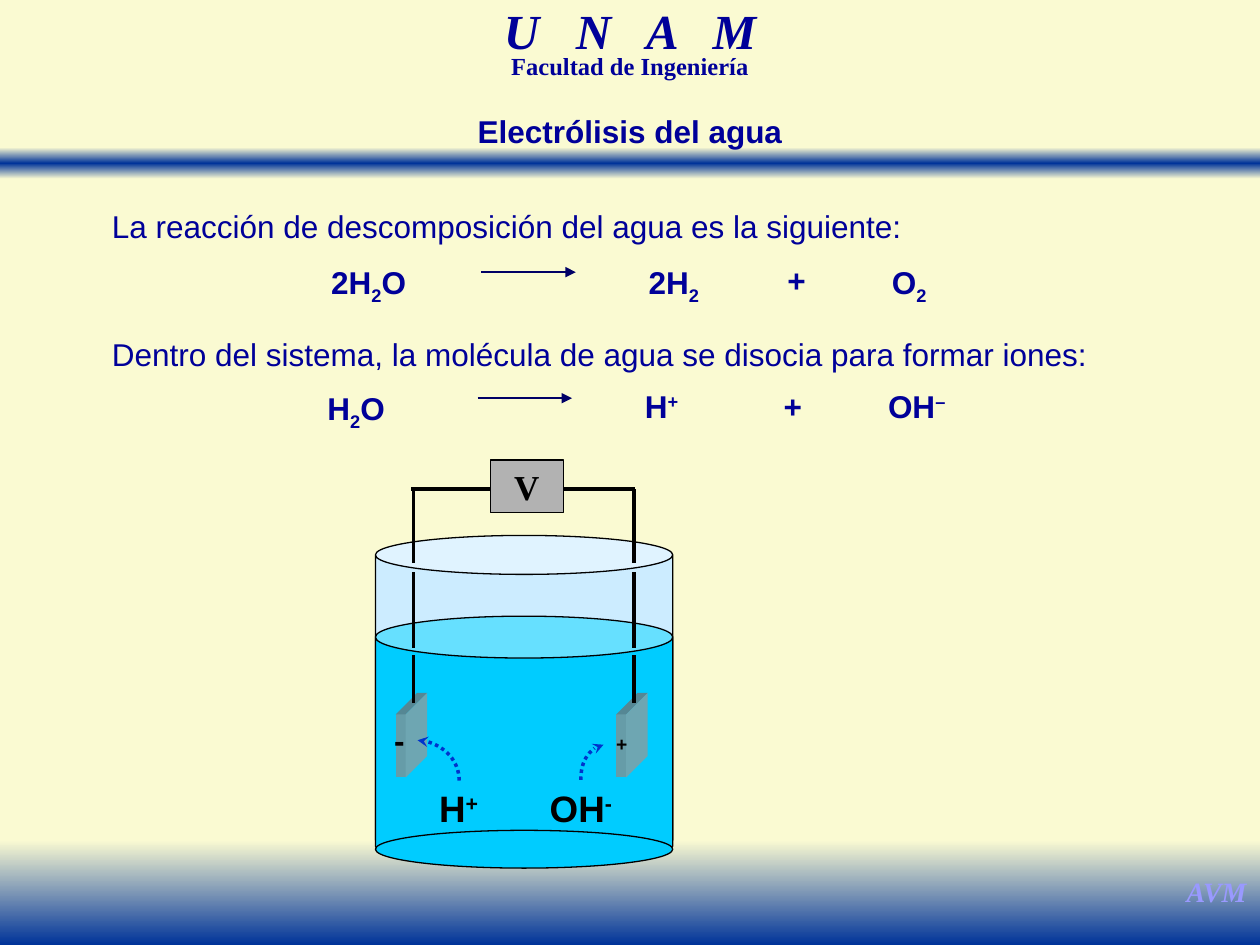
from copy import deepcopy

from lxml import etree
from pptx import Presentation
from pptx import util as u
from pptx.dml.color import RGBColor
from pptx.enum import dml, shapes, text
from pptx.oxml.ns import qn

Inches = u.Inches
COLORS = {
    "cream": "FAFAD2", "band": "003399", "navy": "000099", "arrow": "000066",
    "lilac": "9999FF", "black": "000000", "glass": "CCECFF", "water": "00CCFF",
    "gray": "B2B2B2", "ion": "0033CC", "front": "669CA8", "top": "558794",
    "side": "6EA6B2",
}
rgb = {name: RGBColor.from_string(value) for name, value in COLORS.items()}
KIND = shapes.MSO_SHAPE
ALIGN = text.PP_ALIGN

prs = Presentation()
prs.slide_width, prs.slide_height = Inches(10), Inches(7.5)
slide = prs.slides.add_slide(prs.slide_layouts[6])
slide.background.fill.solid()
slide.background.fill.fore_color.rgb = rgb["cream"]
canvas = slide.shapes


def write(box, words, size, color="navy", font="Arial", bold=True, italic=False,
          align=ALIGN.CENTER, spacing=None, wrap=False):
    """Fill a box with one paragraph; words alternate as (text, baseline %)."""
    frame = box.text_frame
    frame.word_wrap = wrap
    para = frame.paragraphs[0]
    para.alignment = align
    if spacing:
        para.line_spacing = spacing
    para.font.size, para.font.name = u.Pt(size), font
    para.font.bold, para.font.italic = bold, italic
    para.font.color.rgb = rgb[color]
    for part, baseline in words:
        run = para.add_run()
        run.text = part
        if baseline:
            run._r.get_or_add_rPr().set("baseline", str(baseline * 1000))


def wire(x1, y1, x2, y2, color="black", width=2, head=None):
    """Draw a straight line without shadow, with an arrowhead if asked."""
    line = canvas.add_connector(shapes.MSO_CONNECTOR.STRAIGHT,
                                *map(Inches, (x1, y1, x2, y2)))
    line.line.color.rgb = rgb[color]
    line.line.width = u.Pt(width)
    if head:
        etree.SubElement(line.line._get_or_add_ln(), qn("a:tailEnd"), type=head)
    etree.SubElement(line._element.spPr, qn("a:effectLst"))
    return line


# Gradient bands under the title and at the foot
for top, height, names in [(1.17, 0.25, ["cream", "band", "cream"]),
                           (6.67, 0.83, ["cream", "band"])]:
    band = canvas.add_shape(KIND.RECTANGLE, 0, Inches(top), Inches(10), Inches(height))
    band.shadow.inherit = False
    band.line.fill.background()
    band.fill.gradient()
    band.fill.gradient_angle = 270
    stops = band._element.spPr.find(".//" + qn("a:gsLst"))
    if len(names) == 3:
        stops.append(deepcopy(stops[-1]))
    for i, (stop, name) in enumerate(zip(band.fill.gradient_stops, names)):
        stop.color.rgb = rgb[name]
        stop.position = i / (len(names) - 1)

# Heading, signature and title
for at, words, size, style in [
    ((3.04, 0.08, 3.92, 0.43), "U\u00a0\u00a0 N\u00a0\u00a0 A\u00a0\u00a0 M".replace("\u00a0", " "), 28,
     dict(font="Times New Roman", italic=True, spacing=0.7, wrap=True)),
    ((3.21, 0.42, 3.58, 0.26), "Facultad de Ingeniería", 14,
     dict(font="Times New Roman", spacing=0.7, wrap=True)),
    ((9.31, 6.89, 0.69, 0.37), "AVM", 16,
     dict(font="Times New Roman", italic=True, color="lilac")),
    ((3.68, 0.84, 2.64, 0.4), "Electrólisis del agua", 18, {}),
]:
    write(canvas.add_textbox(*map(Inches, at)), [(words, 0)], size, **style)

# Explanations, each followed by its reaction
for sentence, sentence_top, left, top, terms in [
    ("La reacción de descomposición del agua es la siguiente:", 1.47, 2.53, 1.9,
     [(0.81, [("2H", 0), ("2", -25), ("O", 0)]), (0.62, [("2H", 0), ("2", -25)]),
      (0.35, [("+", 0)]), (0.49, [("O", 0), ("2", -25)])]),
    ("Dentro del sistema, la molécula de agua se disocia para formar iones:", 2.49, 2.5, 2.9,
     [(0.67, [("H", 0), ("2", -25), ("O", 0)]), (0.48, [("H", 0), ("+", 30)]),
      (0.35, [("+", 0)]), (0.67, [("OH", 0), ("–", 30)])]),
]:
    box = canvas.add_textbox(*map(Inches, (0.79, sentence_top, 8.43, 0.48)))
    write(box, [(sentence, 0)], 18, bold=False, align=ALIGN.JUSTIFY, spacing=1.4, wrap=True)
    for offset, (width, words) in zip((0, 2.52, 3.62, 4.45), terms):
        box = canvas.add_textbox(*map(Inches, (left + offset, top, width, 0.48)))
        write(box, words, 18, align=ALIGN.JUSTIFY, spacing=1.4)
    wire(left + 1.29, top + 0.26, left + 2.04, top + 0.26, "arrow", 0.75, "triangle")

# Glass, water and bottom of the vessel
for kind, top, height, color, curve in [
    (KIND.CAN, 4.25, 2.57, "glass", 0.131),
    (KIND.CAN, 4.89, 1.99, "water", 0.167),
    (KIND.OVAL, 6.59, 0.3, "water", None),
]:
    vessel = canvas.add_shape(kind, *map(Inches, (2.98, top, 2.36, height)))
    vessel.shadow.inherit = False
    vessel.fill.solid()
    vessel.fill.fore_color.rgb = rgb[color]
    vessel.line.color.rgb = rgb["black"]
    vessel.line.width = u.Pt(0.75)
    if curve:
        vessel.adjustments[0] = curve

# Ions in the water
for left, width, ion, charge in [(3.38, 0.52, "H", "+"), (4.26, 0.7, "OH", "-")]:
    box = canvas.add_textbox(*map(Inches, (left, 6.19, width, 0.45)))
    write(box, [(ion, 0), (charge, 30)], 21, "black")

# Electrode plates with depth, and their wires
for x in (3.14, 4.89):
    front, back = x + 0.08, x + 0.25
    for color, corners in [
        ("front", [(x, 5.67), (front, 5.67), (front, 6.17), (x, 6.17)]),
        ("top", [(x, 5.67), (x + 0.17, 5.5), (back, 5.5), (front, 5.67)]),
        ("side", [(front, 5.67), (back, 5.5), (back, 6), (front, 6.17)]),
    ]:
        outline = canvas.build_freeform(*map(Inches, corners[0]))
        outline.add_line_segments([tuple(map(Inches, c)) for c in corners[1:]])
        face = outline.convert_to_shape()
        face.shadow.inherit = False
        face.fill.solid()
        face.fill.fore_color.rgb = rgb[color]
        face.line.fill.background()
    for bottom, top in [(5.58, 5.2), (5.14, 4.54), (4.47, 3.88)]:
        wire(x + 0.14, bottom, x + 0.14, top)
wire(5.04, 3.88, 3.26, 3.88)

# Voltage source
source = canvas.add_shape(KIND.RECTANGLE, *map(Inches, (3.89, 3.65, 0.58, 0.42)))
source.shadow.inherit = False
source.fill.solid()
source.fill.fore_color.rgb = rgb["gray"]
source.line.color.rgb = rgb["black"]
source.line.width = u.Pt(0.75)
source.text_frame.vertical_anchor = text.MSO_ANCHOR.MIDDLE
write(source, [("V", 0)], 20, "black", "Times New Roman")

# Electrode signs
for at, sign, size in [((4.79, 5.76, 0.29, 0.28), "+", 11), ((3.03, 5.67, 0.28, 0.4), "-", 18)]:
    write(canvas.add_textbox(*map(Inches, at)), [(sign, 0)], size, "black")

# Curved dotted paths of the ions: quarter arcs turned to leave upwards
for ends, turn in [((3.64, 5.87, 3.32, 6.2), 90), ((4.56, 5.96, 4.84, 6.14), 270)]:
    migration = wire(*ends, color="ion", head="stealth")
    migration.line.dash_style = dml.MSO_LINE.ROUND_DOT
    geometry = migration._element.spPr
    geometry.find(qn("a:prstGeom")).set("prst", "curvedConnector2")
    geometry.find(qn("a:xfrm")).set("rot", str(turn * 60000))

prs.save("out.pptx")
